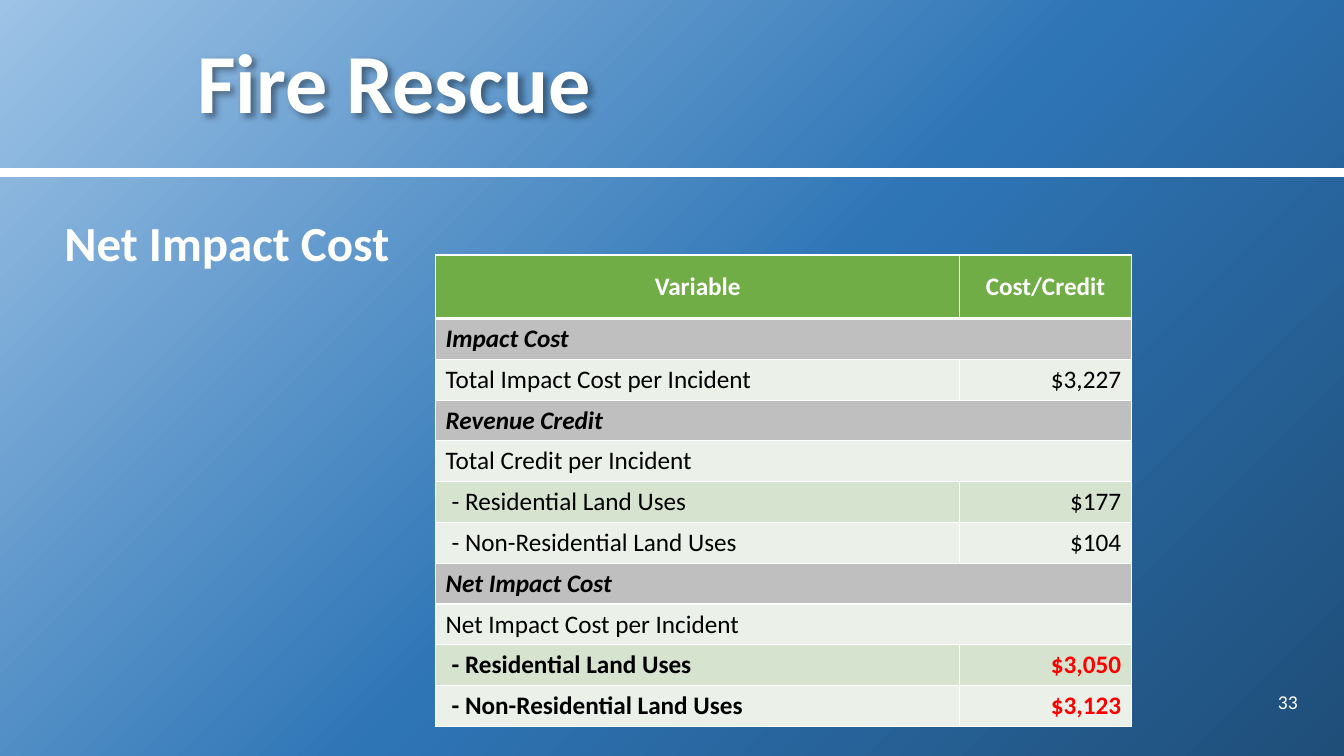
import pptx
import pptx.dml.color
import pptx.enum.shapes
import pptx.enum.text
import pptx.oxml
import pptx.oxml.ns
import pptx.util

COLORS = {
    "white": "FFFFFF", "black": "000000", "red": "FF0000",
    "header": "70AD47", "section": "BFBFBF", "light": "EBF1E9", "green": "D5E3CF",
    "sky": "9DC3E6", "blue": "2E75B6", "navy": "1F4E79",
}
NAMESPACE = pptx.oxml.ns.nsdecls("a")
ALIGN = pptx.enum.text.PP_ALIGN
MIDDLE = pptx.enum.text.MSO_ANCHOR.MIDDLE

presentation = pptx.Presentation()
presentation.slide_width = pptx.util.Inches(13.33)
presentation.slide_height = pptx.util.Inches(7.5)
slide = presentation.slides.add_slide(presentation.slide_layouts[6])


def share(left, top, width, height):
    """Turn percentages of the slide's width and height into lengths."""
    across, down = presentation.slide_width / 100, presentation.slide_height / 100
    return [int(left * across), int(top * down), int(width * across), int(height * down)]


def write(frame, text, size, color="white", bold=False, italic=False, align=ALIGN.LEFT):
    """Put one run into the first paragraph of a text frame and return the paragraph."""
    frame.word_wrap = True
    paragraph = frame.paragraphs[0]
    paragraph.alignment = align
    run = paragraph.add_run()
    run.text = text
    run.font.name = "Calibri"
    run.font.size = pptx.util.Pt(size)
    run.font.bold = bold
    run.font.italic = italic
    run.font.color.rgb = pptx.dml.color.RGBColor.from_string(COLORS[color])
    return paragraph


# Background: gradient spreading from the top left corner
background_fill = slide.background.fill
background_fill.solid()
background_properties = slide.background._cSld.bg.bgPr
stops = "".join(
    f'<a:gs pos="{position * 1000}"><a:srgbClr val="{COLORS[color]}"/></a:gs>'
    for position, color in [(0, "sky"), (53, "blue"), (100, "navy")]
)
background_properties.replace(background_properties[0], pptx.oxml.parse_xml(
    f'<a:gradFill {NAMESPACE} rotWithShape="1"><a:gsLst>{stops}</a:gsLst>'
    '<a:path path="circle"><a:fillToRect r="100000" b="100000"/></a:path></a:gradFill>'
))

# Rule under the title
left, top, width, height = share(0, 22.8, 100, 0)
rule = slide.shapes.add_connector(
    pptx.enum.shapes.MSO_CONNECTOR.STRAIGHT, left, top, left + width, top)
rule.line.width = pptx.util.Pt(6)
rule.line.color.rgb = pptx.dml.color.RGBColor.from_string(COLORS["white"])
rule._element.spPr.append(pptx.oxml.parse_xml(f"<a:effectLst {NAMESPACE}/>"))

# Page number and subtitle
page_number = slide.shapes.add_textbox(*share(90.62, 90.13, 6.68, 5.33))
page_number.text_frame.vertical_anchor = MIDDLE
write(page_number.text_frame, "33", 14, align=ALIGN.RIGHT)

subtitle = slide.shapes.add_textbox(*share(4.05, 25.87, 93.17, 70.27))
write(subtitle.text_frame, "Net Impact Cost", 35, bold=True).line_spacing = 1.2

# Cost table: kind of row, label, amount (None where the label spans both columns)
cost_rows = [
    ("header", "Variable", "Cost/Credit"),
    ("section", "Impact Cost", None),
    ("plain", "Total Impact Cost per Incident", "$3,227"),
    ("section", "Revenue Credit", None),
    ("plain", "Total Credit per Incident", None),
    ("item", "- Residential Land Uses", "$177"),
    ("item", "- Non-Residential Land Uses", "$104"),
    ("section", "Net Impact Cost", None),
    ("plain", "Net Impact Cost per Incident", None),
    ("result", "- Residential Land Uses", "$3,050"),
    ("result", "- Non-Residential Land Uses", "$3,123"),
]
HEADER_HEIGHT, ROW_HEIGHT = 8.4, 5.4
table_height = HEADER_HEIGHT + ROW_HEIGHT * (len(cost_rows) - 1)
table = slide.shapes.add_table(
    len(cost_rows), 2, *share(32.41, 33.73, 51.76, table_height)).table
for column, column_share in zip(table.columns, (39.01, 12.75)):
    column.width = share(0, 0, column_share, 0)[2]

for row_index, (kind, label, amount) in enumerate(cost_rows):
    row_height = HEADER_HEIGHT if kind == "header" else ROW_HEIGHT
    table.rows[row_index].height = share(0, 0, 0, row_height)[3]
    band = "green" if row_index % 2 else "light"
    fill_color = COLORS[kind if kind in ("header", "section") else band]
    if amount is None:
        table.cell(row_index, 0).merge(table.cell(row_index, 1))

    for column_index, text in enumerate((label, amount)):
        cell = table.cell(row_index, column_index)
        cell_properties = cell._tc.get_or_add_tcPr()
        for side in "LRTB":
            thick = (row_index, side) in ((0, "B"), (1, "T"))
            cell_properties.append(pptx.oxml.parse_xml(
                f'<a:ln{side} {NAMESPACE} w="{pptx.util.Pt(3 if thick else 1)}"><a:solidFill>'
                f'<a:srgbClr val="{COLORS["white"]}"/></a:solidFill></a:ln{side}>'))
        cell.fill.solid()
        cell.fill.fore_color.rgb = pptx.dml.color.RGBColor.from_string(fill_color)
        if text is None:
            continue

        text_color, align = "black", ALIGN.RIGHT if column_index else ALIGN.LEFT
        if kind == "header":
            text_color, align = "white", ALIGN.CENTER
            cell.vertical_anchor = MIDDLE
        elif kind == "result" and column_index:
            text_color = "red"
        if kind in ("item", "result") and column_index == 0:
            cell.margin_left = pptx.util.Inches(0.16)
        write(cell.text_frame, text, 18, text_color, bold=kind in ("header", "section", "result"),
              italic=kind == "section", align=align)

# Title with a soft shadow
title = slide.shapes.add_textbox(*share(13.95, 0, 83.27, 22.8))
title.text_frame.vertical_anchor = MIDDLE
write(title.text_frame, "Fire Rescue", 60, bold=True).line_spacing = 0.9
title._element.spPr.append(pptx.oxml.parse_xml(
    f'<a:effectLst {NAMESPACE}><a:outerShdw blurRad="50800" dist="38100" dir="2700000">'
    f'<a:srgbClr val="{COLORS["black"]}"><a:alpha val="40000"/></a:srgbClr>'
    '</a:outerShdw></a:effectLst>'))

presentation.save("out.pptx")
